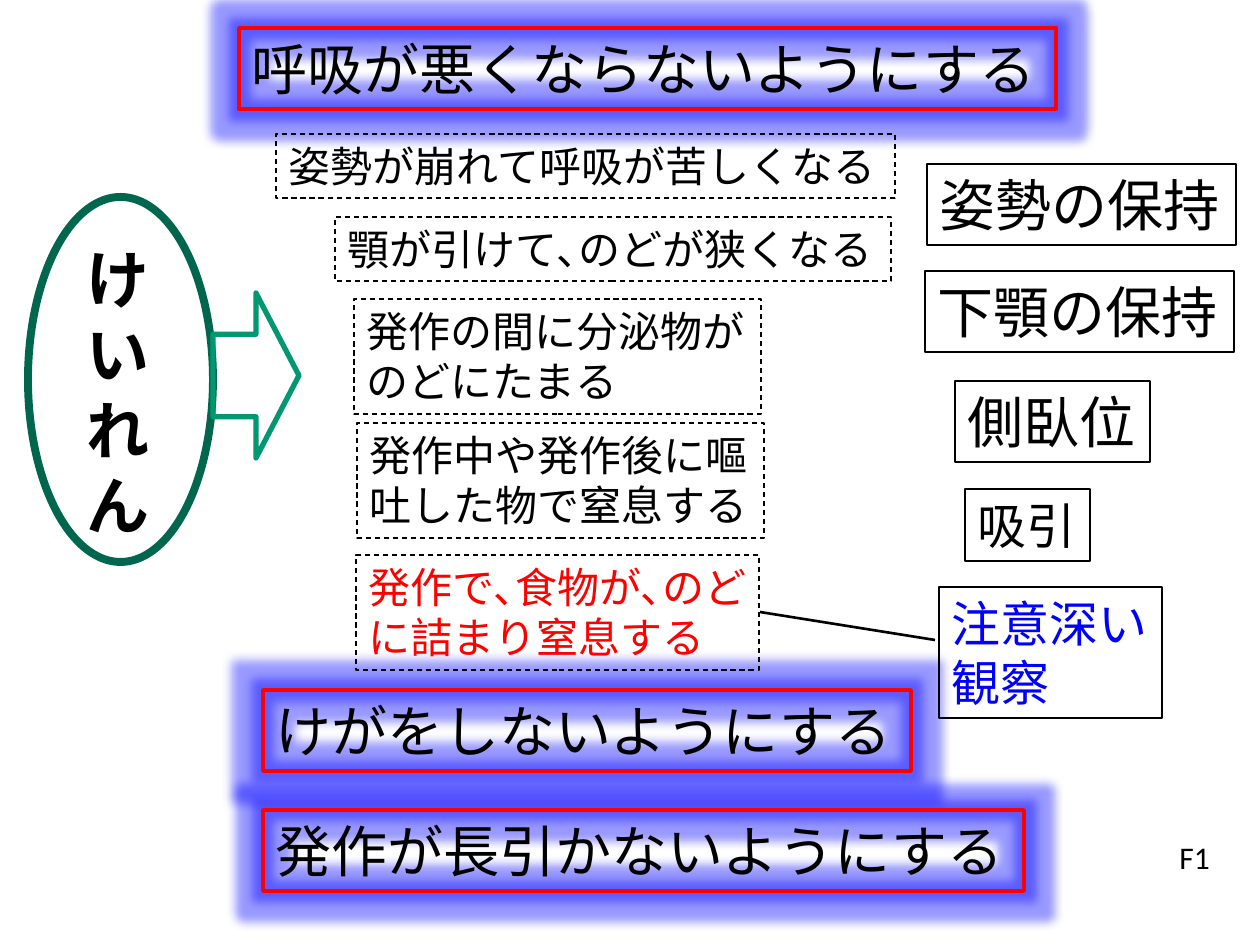
"""Build the slide on preventing harm during convulsions."""
from lxml import etree
from pptx import Presentation
from pptx.dml.color import RGBColor
from pptx.enum.dml import MSO_LINE
from pptx.enum.shapes import MSO_CONNECTOR, MSO_SHAPE
from pptx.enum.text import MSO_ANCHOR, MSO_AUTO_SIZE, PP_ALIGN
from pptx.oxml.ns import qn
from pptx.util import Emu, Pt

RECTANGLE, OVAL, ARROW = MSO_SHAPE.RECTANGLE, MSO_SHAPE.OVAL, MSO_SHAPE.RIGHT_ARROW
STRAIGHT = MSO_CONNECTOR.STRAIGHT
DASH = MSO_LINE.DASH
TOP, LEFT = MSO_ANCHOR.TOP, PP_ALIGN.LEFT
GROW = MSO_AUTO_SIZE.SHAPE_TO_FIT_TEXT
SCALE = 914400 / 126
SERIF = "Times New Roman"
COLORS = {"black": "000000", "red": "FF0000", "blue": "0000FF",
          "oval": "00664D", "arrow": "009771", "glow": "0000FF"}

GOALS = [
    ((239, 28, 817, 81), "呼吸が悪くならないようにする"),
    ((263, 690, 648, 81), "けがをしないようにする"),
    ((263, 810, 761, 81), "発作が長引かないようにする"),
]
CAUSES = [
    ((276, 134, 619, 64), "姿勢が崩れて呼吸が苦しくなる", "black", False),
    ((335, 217, 556, 64), "顎が引けて､のどが狭くなる", "black", False),
    ((354, 299, 407, 115), "発作の間に分泌物が\nのどにたまる", "black", False),
    ((357, 423, 407, 115), "発作中や発作後に嘔\n吐した物で窒息する", "black", False),
    ((356, 555, 403, 115), "発作で､食物が､のど\nに詰まり窒息する", "red", True),
]
ACTIONS = [
    ((927, 164, 309, 81), "姿勢の保持", 32, "black"),
    ((925, 271, 309, 81), "下顎の保持", 32, "black"),
    ((955, 381, 195, 81), "側臥位", 32, "black"),
    ((965, 489, 125, 72), "吸引", 28, "black"),
    ((939, 587, 223, 131), "注意深い\n観察", 28, "blue"),
]


def px(*lengths):
    """Turn pixel lengths into EMU."""
    return [Emu(round(length * SCALE)) for length in lengths]


def rgb(name):
    """Look up a named colour."""
    return RGBColor.from_string(COLORS[name])


def set_text(shape, text, size, color="black", font=SERIF, bold=False, wrap=False):
    """Fill a shape with left-aligned lines of text."""
    frame = shape.text_frame
    frame.text = text
    frame.word_wrap = wrap
    frame.auto_size = GROW
    frame.vertical_anchor = TOP
    for para in frame.paragraphs:
        para.alignment = LEFT
        for span in para.runs:
            span.font.size = Pt(size)
            span.font.name = font
            span.font.bold = bold
            span.font.color.rgb = rgb(color)


def add_outline(slide, kind, place, color, width, dash=None):
    """Add an unfilled preset shape with a coloured line."""
    shape = slide.shapes.add_shape(kind, *px(*place))
    shape.shadow.inherit = False
    shape.fill.background()
    shape.line.color.rgb = rgb(color)
    shape.line.width = Pt(width)
    if dash:
        shape.line.dash_style = dash
    return shape


def add_glow(shape, points):
    """Surround a shape with a translucent glow."""
    effects = shape._element.spPr.find(qn("a:effectLst"))
    glow = etree.SubElement(effects, qn("a:glow"), rad=str(Pt(points)))
    color = etree.SubElement(glow, qn("a:srgbClr"), val=COLORS["glow"])
    etree.SubElement(color, qn("a:alpha"), val="40000")


def add_label(slide, place, text, size, **style):
    """Add a plain text box."""
    box = slide.shapes.add_textbox(*px(*place))
    set_text(box, text, size, **style)


def add_link(slide, start, end):
    """Join a cause to its action with a straight line."""
    link = slide.shapes.add_connector(STRAIGHT, *px(*start, *end))
    link.line.color.rgb = rgb("black")
    link.line.width = Pt(1.5)
    etree.SubElement(link._element.spPr, qn("a:effectLst"))


def main():
    """Build and save the deck."""
    deck = Presentation()
    deck.slide_width, deck.slide_height = px(1260, 945)
    slide = deck.slides.add_slide(deck.slide_layouts[6])

    add_label(slide, (74, 234, 121, 318), "けいれん", 36, bold=True, wrap=True)
    for place, text in GOALS:
        goal = add_outline(slide, RECTANGLE, place, "red", 2)
        add_glow(goal, 11)
        set_text(goal, text, 32)
    for place, text, color, wrap in CAUSES:
        cause = add_outline(slide, RECTANGLE, place, "black", 0.75, DASH)
        set_text(cause, text, 24, color, wrap=wrap)
    add_outline(slide, OVAL, (28, 197, 185, 365), "oval", 4.5)
    for place, text, size, color in ACTIONS:
        action = add_outline(slide, RECTANGLE, place, "black", 0.75)
        set_text(action, text, size, color)
    add_link(slide, (760, 612), (935, 640))
    add_outline(slide, ARROW, (213, 293, 86, 165), "arrow", 3)
    add_label(slide, (1167, 832, 57, 50), "F1", 18, font="Calibri")
    deck.save("out.pptx")


if __name__ == "__main__":
    main()
